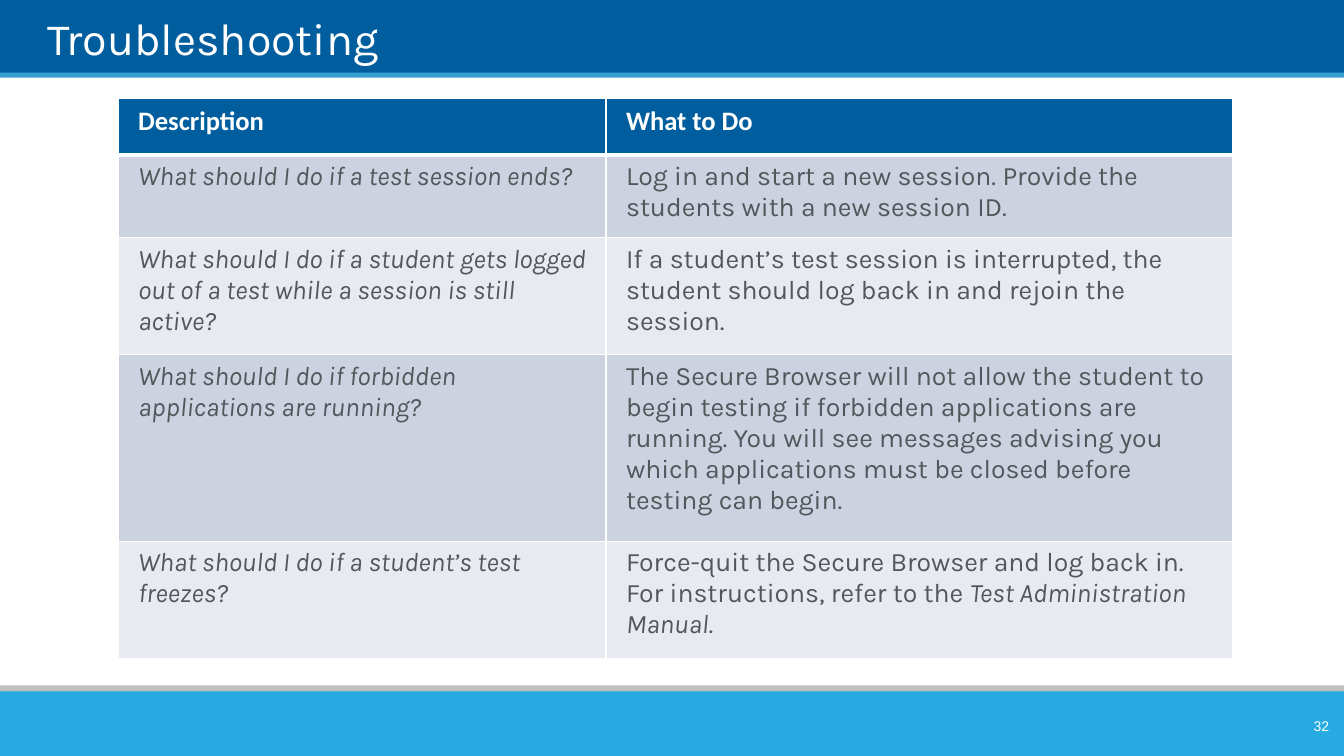
from lxml import etree
from pptx import Presentation
from pptx.dml.color import RGBColor
from pptx.enum.shapes import MSO_SHAPE
from pptx.enum.text import MSO_ANCHOR, MSO_AUTO_SIZE, PP_ALIGN
from pptx.oxml.ns import qn
from pptx.util import Inches, Pt

RECTANGLE = MSO_SHAPE.RECTANGLE
BOTTOM, MIDDLE = MSO_ANCHOR.BOTTOM, MSO_ANCHOR.MIDDLE
LEFT, RIGHT = PP_ALIGN.LEFT, PP_ALIGN.RIGHT
NO_AUTOFIT = MSO_AUTO_SIZE.NONE

WHITE = RGBColor(0xFF, 0xFF, 0xFF)
NAVY = RGBColor(0x00, 0x5E, 0x9E)
MID_BLUE = RGBColor(0x35, 0xA0, 0xCE)
SKY_BLUE = RGBColor(0x27, 0xAA, 0xE1)
SILVER = RGBColor(0xBF, 0xBF, 0xBF)
TEXT_GREY = RGBColor(0x53, 0x56, 0x5A)
BAND_DARK = RGBColor(0xCC, 0xD2, 0xDF)
BAND_LIGHT = RGBColor(0xE7, 0xEA, 0xF0)

SLIDE_WIDTH, SLIDE_HEIGHT = 13.33, 7.5
COLUMN_WIDTHS = (4.84, 6.22)
ROW_HEIGHTS = (0.56, 0.82, 1.16, 1.85, 1.16)
HEADINGS = ("Description", "What to Do")

# Each answer is a list of (text, italic) runs.
PROBLEMS = [
    ("What should I do if a test session ends?",
     [("Log in and start a new session. Provide the students with a new "
       "session ID.", False)]),
    ("What should I do if a student gets logged out of a test while a session "
     "is still active?",
     [("If a student’s test session is interrupted, the student should log "
       "back in and rejoin the session.", False)]),
    ("What should I do if forbidden applications are running?",
     [("The Secure Browser will not allow the student to begin testing if "
       "forbidden applications are running. You will see messages advising "
       "you which applications must be closed before testing can begin.",
       False)]),
    ("What should I do if a student’s test freezes?",
     [("Force-quit the Secure Browser and log back in. For instructions, "
       "refer to the ", False),
      ("Test Administration Manual", True),
      (".", False)]),
]


def set_font(font, name, size, color):
    font.name = name
    font.size = Pt(size)
    font.color.rgb = color


def add_bar(slide, top, height, color):
    bar = slide.shapes.add_shape(RECTANGLE, 0, Inches(top),
                                 Inches(SLIDE_WIDTH), Inches(height))
    bar.shadow.inherit = False
    bar.fill.solid()
    bar.fill.fore_color.rgb = color
    bar.line.fill.background()


def add_header(slide, top, heading):
    add_bar(slide, top, 0.75, NAVY)
    add_bar(slide, top + 0.73, 0.05, MID_BLUE)

    title = slide.shapes.title
    title.left, title.top = Inches(0.47), Inches(top + 0.08)
    title.width, title.height = Inches(12.05), Inches(0.57)
    # Bring the title in front of the bars.
    slide.shapes._spTree.append(title._element)

    frame = title.text_frame
    frame.text = heading
    frame.auto_size = NO_AUTOFIT
    frame.vertical_anchor = BOTTOM
    frame.margin_left = frame.margin_right = 0
    frame.margin_top = frame.margin_bottom = 0
    paragraph = frame.paragraphs[0]
    paragraph.alignment = LEFT
    set_font(paragraph.font, "Karla", 32, WHITE)


def add_footer(slide, top, page_number):
    add_bar(slide, top, 0.14, SILVER)
    add_bar(slide, top + 0.06, SLIDE_HEIGHT - top - 0.06, SKY_BLUE)

    page = slide.shapes.add_textbox(Inches(12.51), Inches(top + 0.25),
                                    Inches(0.77), Inches(0.3))
    frame = page.text_frame
    frame.word_wrap = True
    frame.vertical_anchor = MIDDLE
    paragraph = frame.paragraphs[0]
    paragraph.text = page_number
    paragraph.alignment = RIGHT
    set_font(paragraph.font, "Arial", 10, WHITE)


def set_borders(cell, top_width, bottom_width):
    """Draw white borders; the XML must be added before the cell's fill."""
    properties = cell._tc.get_or_add_tcPr()
    widths = {"a:lnL": 1, "a:lnR": 1, "a:lnT": top_width, "a:lnB": bottom_width}
    for tag, width in widths.items():
        border = etree.SubElement(properties, qn(tag), w=str(Pt(width)))
        fill = etree.SubElement(border, qn("a:solidFill"))
        etree.SubElement(fill, qn("a:srgbClr"), val=str(WHITE))


def fill_cell(cell, row, runs):
    is_heading = row == 0
    set_borders(cell, 3 if row == 1 else 1, 3 if is_heading else 1)
    cell.fill.solid()
    if is_heading:
        cell.fill.fore_color.rgb = NAVY
    else:
        cell.fill.fore_color.rgb = BAND_DARK if row % 2 else BAND_LIGHT
    cell.margin_left = cell.margin_right = Inches(0.12)
    cell.margin_top = cell.margin_bottom = Inches(0.06)

    paragraph = cell.text_frame.paragraphs[0]
    paragraph._p.get_or_add_pPr().set("marL", str(Inches(0.08)))
    if is_heading:
        name, color = "Calibri", WHITE
    else:
        name, color = "Karla", TEXT_GREY
    paragraph.space_before = paragraph.space_after = Pt(4)
    for text, italic in runs:
        run = paragraph.add_run()
        run.text = text
        set_font(run.font, name, 19, color)
        run.font.bold = is_heading
        run.font.italic = italic


def add_problem_table(slide, left, top):
    table = slide.shapes.add_table(
        len(ROW_HEIGHTS), len(COLUMN_WIDTHS), Inches(left), Inches(top),
        Inches(sum(COLUMN_WIDTHS)), Inches(sum(ROW_HEIGHTS))).table
    for column, width in zip(table.columns, COLUMN_WIDTHS):
        column.width = Inches(width)
    for row, height in zip(table.rows, ROW_HEIGHTS):
        row.height = Inches(height)

    for column, heading in enumerate(HEADINGS):
        fill_cell(table.cell(0, column), 0, [(heading, False)])
    for row, (question, answer) in enumerate(PROBLEMS, start=1):
        fill_cell(table.cell(row, 0), row, [(question, True)])
        fill_cell(table.cell(row, 1), row, answer)


def main():
    presentation = Presentation()
    presentation.slide_width = Inches(SLIDE_WIDTH)
    presentation.slide_height = Inches(SLIDE_HEIGHT)
    title_only = presentation.slide_layouts[5]
    slide = presentation.slides.add_slide(title_only)
    add_header(slide, -0.01, "Troubleshooting")
    add_problem_table(slide, 1.17, 0.98)
    add_footer(slide, 6.8, "32")
    presentation.save("out.pptx")


if __name__ == "__main__":
    main()
